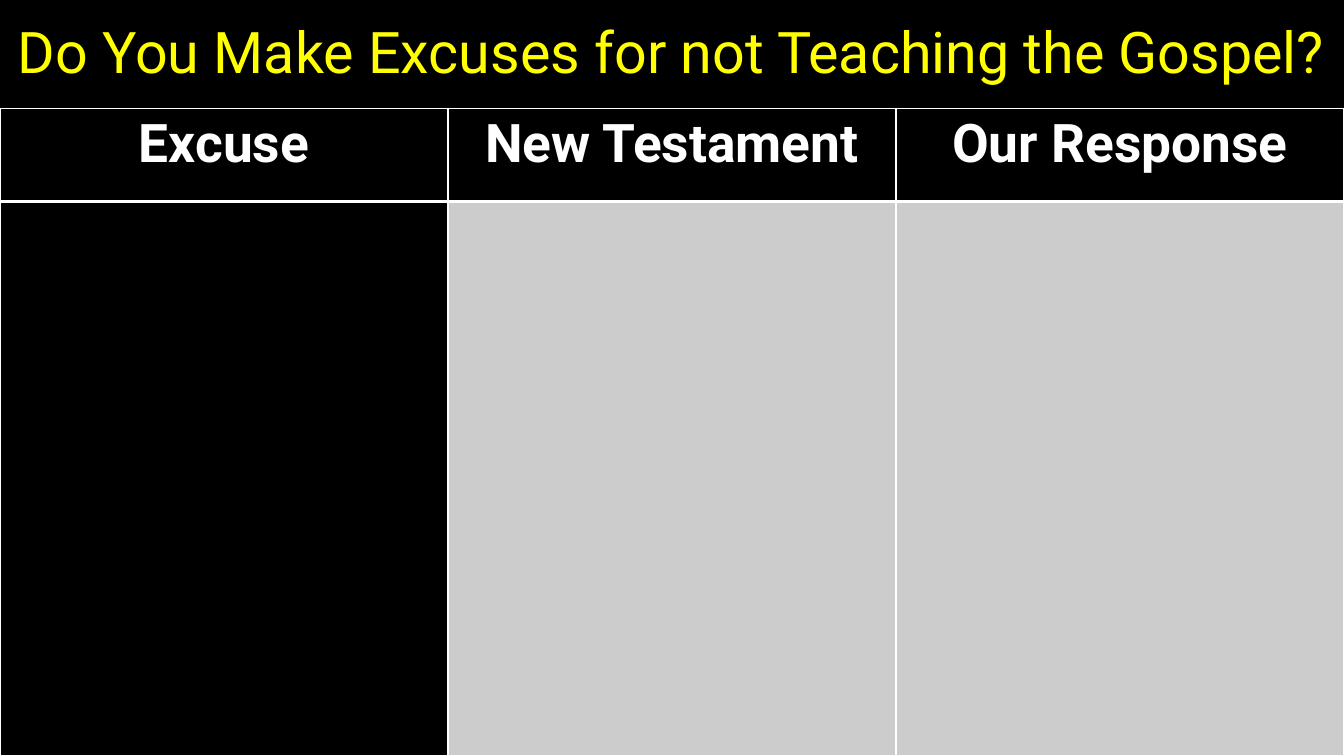
from dataclasses import dataclass

from lxml.etree import SubElement
from pptx import Presentation
from pptx.dml.color import RGBColor as RGB
from pptx.enum.text import MSO_ANCHOR as Anchor, PP_ALIGN as Align
from pptx.oxml.ns import qn
from pptx.util import Inches, Pt


@dataclass(frozen=True)
class Theme:
    font: str = "Roboto"
    black: str = "000000"
    yellow: str = "FFFF00"
    white: str = "FFFFFF"
    grey: str = "CCCCCC"
    title_size: float = 41
    header_size: float = 38
    thin: float = 1
    thick: float = 3


THEME = Theme()
WIDTH, HEIGHT = 13.33, 7.5
TITLE_H, HEADER_H = 1.08, 0.92
TITLE = "Do You Make Excuses for not Teaching the Gospel?"
HEADERS = ["Excuse", "New Testament", "Our Response"]


def write(tf, text, size, color, spacing, bold=False):
    tf.text = text
    p = tf.paragraphs[0]
    p.alignment = Align.CENTER
    p.line_spacing = spacing
    font = p.runs[0].font
    font.name, font.size, font.bold = THEME.font, Pt(size), bold
    font.color.rgb = RGB.from_string(color)


def style_cell(cell, fill, top, bottom):
    tcPr = cell._tc.get_or_add_tcPr()
    widths = {"lnL": THEME.thin, "lnR": THEME.thin, "lnT": top, "lnB": bottom}
    for side, width in widths.items():
        ln = SubElement(tcPr, qn(f"a:{side}"), w=str(Pt(width)))
        solid = SubElement(ln, qn("a:solidFill"))
        SubElement(solid, qn("a:srgbClr"), val=THEME.white)
    cell.fill.solid()
    cell.fill.fore_color.rgb = RGB.from_string(fill)
    cell.margin_left = cell.margin_right = Inches(0.07)
    cell.margin_top = cell.margin_bottom = 0


def add_title(s, x, y, w, h):
    sp = s.shapes.add_textbox(Inches(x), Inches(y), Inches(w), Inches(h))
    tf = sp.text_frame
    tf.word_wrap = True
    tf.vertical_anchor = Anchor.MIDDLE
    write(tf, TITLE, THEME.title_size, THEME.yellow, 0.9)


def add_excuse_table(s, x, y, w, h):
    frame = s.shapes.add_table(2, len(HEADERS), Inches(x), Inches(y), Inches(w), Inches(h))
    table = frame.table
    table.horz_banding = False
    for row, height in zip(table.rows, (HEADER_H, h - HEADER_H)):
        row.height = Inches(height)
    for i, header in enumerate(HEADERS):
        table.columns[i].width = Inches(w / len(HEADERS))
        head, body = table.cell(0, i), table.cell(1, i)
        style_cell(head, THEME.black, THEME.thin, THEME.thick)
        style_cell(body, THEME.grey if i else THEME.black, THEME.thick, THEME.thin)
        write(head.text_frame, header, THEME.header_size, THEME.white, 1.07, bold=True)


def main():
    prs = Presentation()
    prs.slide_width, prs.slide_height = Inches(WIDTH), Inches(HEIGHT)
    s = prs.slides.add_slide(prs.slide_layouts[6])
    s.background.fill.solid()
    s.background.fill.fore_color.rgb = RGB.from_string(THEME.black)
    add_title(s, 0, 0, WIDTH, TITLE_H)
    add_excuse_table(s, 0, TITLE_H, WIDTH, HEIGHT - TITLE_H)
    prs.save("out.pptx")


if __name__ == "__main__":
    main()
